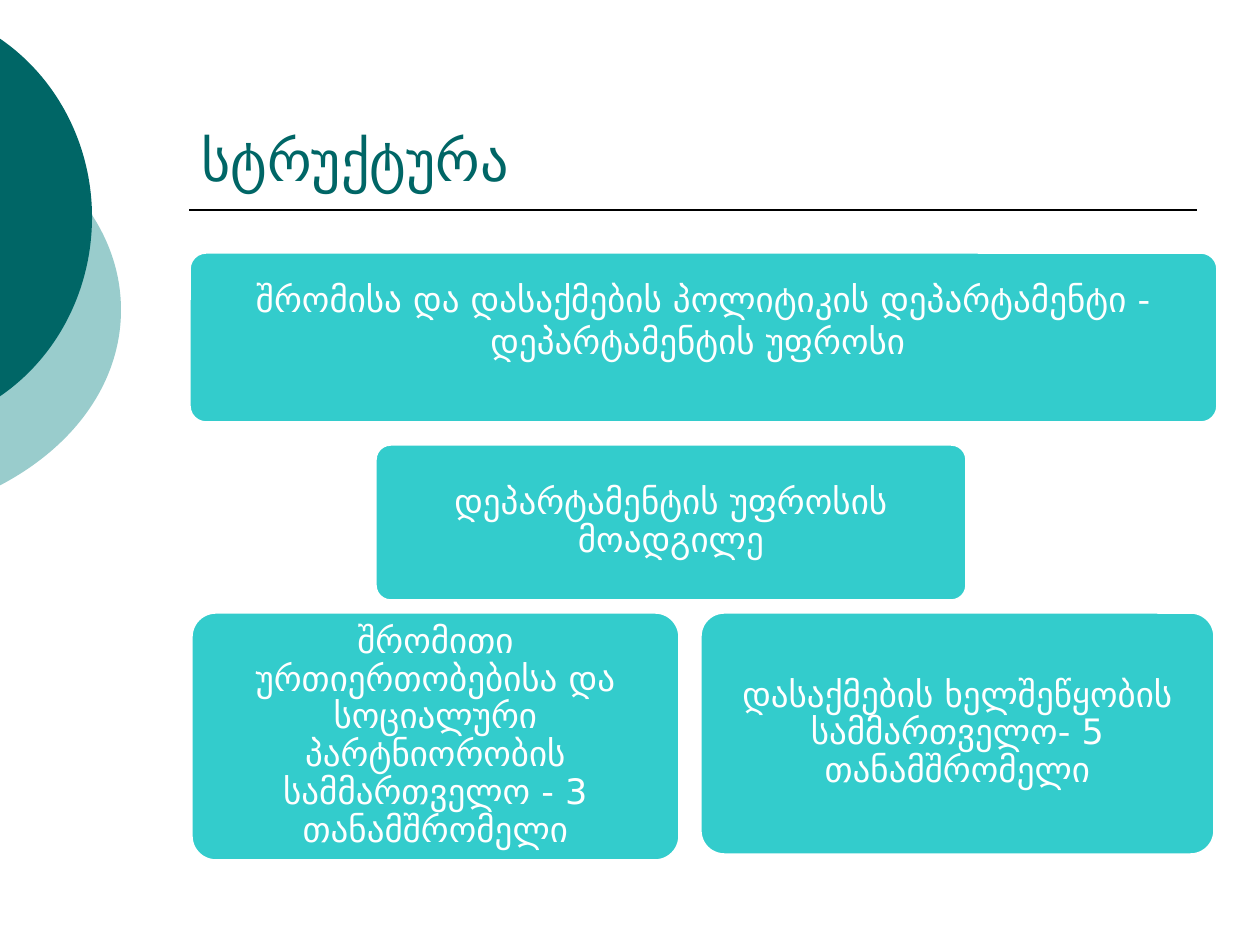
from dataclasses import dataclass

from lxml import etree
from pptx import Presentation
from pptx import util as u
from pptx.dml.color import RGBColor
from pptx.enum import shapes, text
from pptx.oxml.ns import qn


@dataclass(frozen=True)
class Theme:
    """Colours, fonts and type sizes of the slide."""
    dark: RGBColor = RGBColor(0x00, 0x66, 0x66)
    pale: RGBColor = RGBColor(0x99, 0xCC, 0xCC)
    box: RGBColor = RGBColor(0x33, 0xCC, 0xCC)
    white: RGBColor = RGBColor(0xFF, 0xFF, 0xFF)
    black: RGBColor = RGBColor(0x00, 0x00, 0x00)
    title_font: str = "Arial"
    body_font: str = "DejaVu Sans"
    title_size: int = 32
    body_size: int = 20


THEME = Theme()
PX_PER_INCH = 126


def px(length):
    """Turn pixels into EMU."""
    return u.Emu(round(length * 914400 / PX_PER_INCH))


def add_edge_disc(slide, frame, start, curves, color):
    """Draw the part of a disc that bulges in from the left edge."""
    left, top, width, height = frame
    builder = slide.shapes.build_freeform(px(left), px(top), scale=1.0)
    builder.add_line_segments([(px(left + width), px(top + height))], close=True)
    shape = builder.convert_to_shape()
    shape.shadow.inherit = False
    shape.fill.solid()
    shape.fill.fore_color.rgb = color
    shape.line.fill.background()

    outline = next(shape.element.iter(qn("a:path")))
    for command in list(outline):
        outline.remove(command)
    for tag, points in [("moveTo", [start])] + [("cubicBezTo", c) for c in curves]:
        command = etree.SubElement(outline, qn(f"a:{tag}"))
        for x, y in points:
            etree.SubElement(command, qn("a:pt"), x=str(px(x - left)), y=str(px(y - top)))
    etree.SubElement(outline, qn("a:close"))


def add_rule(slide, left, right, y):
    """Draw the line under the title."""
    rule = slide.shapes.add_connector(
        shapes.MSO_CONNECTOR.STRAIGHT, px(left), px(y), px(right), px(y))
    rule.line.color.rgb = THEME.black
    rule.line.width = u.Pt(1)
    etree.SubElement(rule.element.spPr, qn("a:effectLst"))


def style_font(paragraph, name, size, color):
    """Set the font of a whole paragraph."""
    paragraph.font.name = name
    paragraph.font.size = u.Pt(size)
    paragraph.font.color.rgb = color


def add_title(slide, words, left, top, width, height):
    """Add the title, resting on the bottom of its box."""
    frame = slide.shapes.add_textbox(px(left), px(top), px(width), px(height)).text_frame
    frame.word_wrap = True
    frame.vertical_anchor = text.MSO_ANCHOR.BOTTOM
    frame.text = words
    style_font(frame.paragraphs[0], THEME.title_font, THEME.title_size, THEME.dark)


def add_box(slide, words, left, top, width, height, spacing=0.9, lift=0):
    """Add a rounded box of the chart, with its text lifted above the middle."""
    shape = slide.shapes.add_shape(
        shapes.MSO_SHAPE.ROUNDED_RECTANGLE, px(left), px(top), px(width), px(height))
    shape.adjustments[0] = 0.1
    shape.shadow.inherit = False
    shape.fill.solid()
    shape.fill.fore_color.rgb = THEME.box
    shape.line.color.rgb = THEME.white
    shape.line.width = u.Pt(2)
    frame = shape.text_frame
    frame.word_wrap = True
    frame.vertical_anchor = text.MSO_ANCHOR.MIDDLE
    frame.margin_left = frame.margin_right = frame.margin_top = px(10)
    frame.margin_bottom = px(10 + 2 * lift)
    frame.text = words
    paragraph = frame.paragraphs[0]
    paragraph.alignment = text.PP_ALIGN.CENTER
    paragraph.line_spacing = spacing
    style_font(paragraph, THEME.body_font, THEME.body_size, THEME.white)


def main():
    """Build the slide and save it."""
    presentation = Presentation()
    presentation.slide_width = px(1260)
    presentation.slide_height = px(945)
    slide = presentation.slides.add_slide(presentation.slide_layouts[6])

    add_edge_disc(slide, (-446, 95, 567, 431), (-1, 134), [
        [(76, 174), (121, 239), (121, 310)],
        [(121, 381), (76, 446), (-1, 486)],
    ], THEME.pale)
    add_edge_disc(slide, (-334, 0, 426, 435), (-1, 38), [
        [(58, 78), (92, 146), (92, 217)],
        [(92, 289), (58, 357), (-1, 397)],
    ], THEME.dark)
    add_rule(slide, 189, 1197, 210)
    add_title(slide, "სტრუქტურა", 189, 42, 1008, 157)

    add_box(slide, "შრომისა და დასაქმების პოლიტიკის დეპარტამენტი - დეპარტამენტის უფროსი ",
            189, 252, 1029, 171, spacing=1.0, lift=18)
    add_box(slide, "დეპარტამენტის უფროსის მოადგილე", 375, 444, 592, 157)
    add_box(slide, "შრომითი ურთიერთობებისა და სოციალური პარტნიორობის "
            "სამმართველო - 3 თანამშრომელი", 191, 612, 489, 249)
    add_box(slide, "დასაქმების ხელშეწყობის სამმართველო- 5 თანამშრომელი",
            700, 612, 515, 243)

    presentation.save("out.pptx")


if __name__ == "__main__":
    main()
